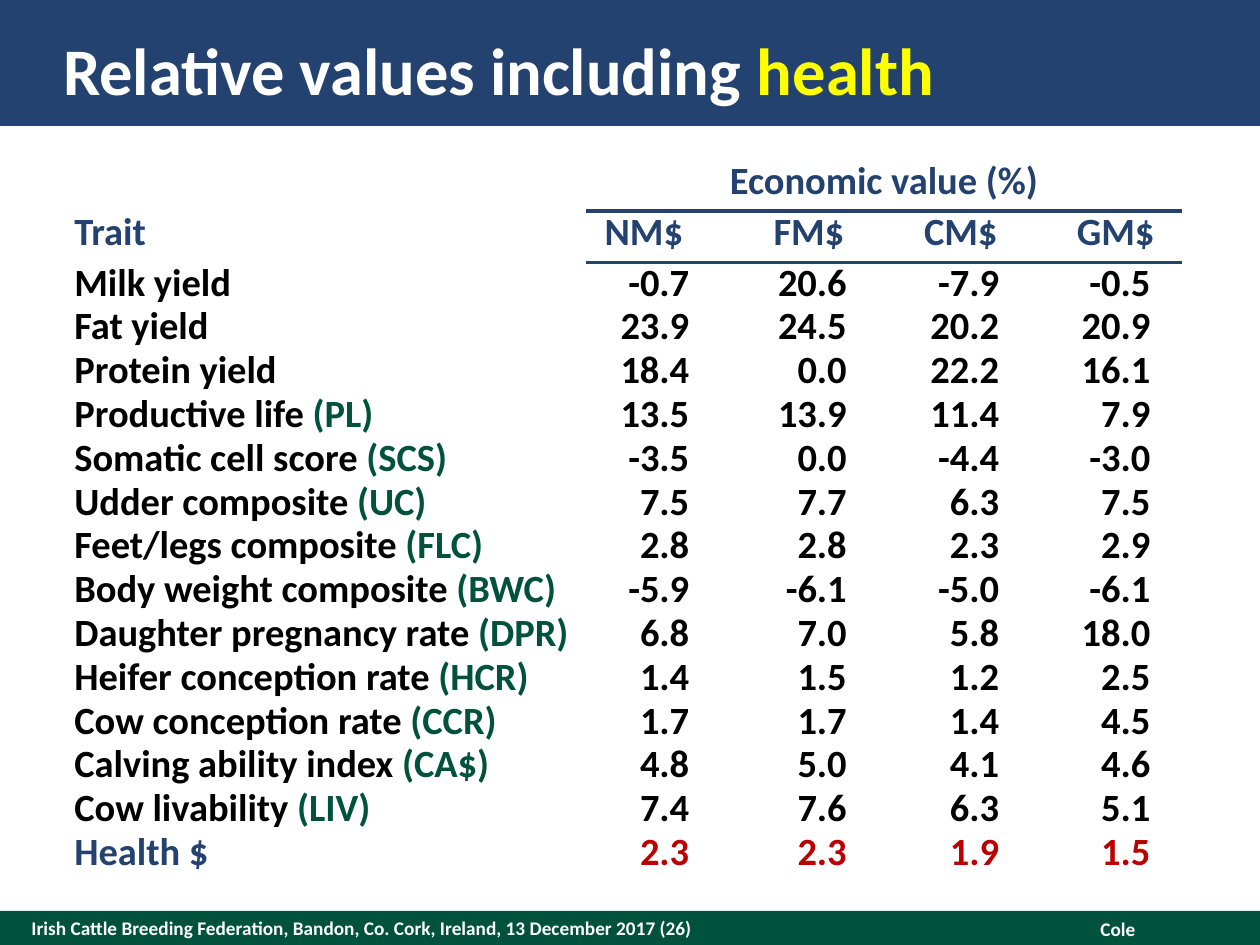
from lxml.etree import SubElement
from pptx import Presentation
from pptx.dml.color import RGBColor
from pptx.enum.shapes import MSO_SHAPE
from pptx.enum.text import MSO_ANCHOR as Anchor, MSO_AUTO_SIZE as AutoSize, PP_ALIGN as Align
from pptx.oxml.ns import qn
from pptx.util import Inches, Pt

COLORS = {"navy": "244270", "green": "00523C", "white": "FFFFFF",
          "yellow": "FFFF00", "black": "000000", "red": "BA0000"}
FONT = "Calibri"
NO_STYLE = "{2D5ABB26-0587-4C30-8999-92F81FD0307C}"
COLUMN_WIDTHS = [4.06, 0.92, 1.5, 1.26, 1.05]
INDEXES = [("NM$", 0, 0), ("FM$", 0.2, 0), ("CM$", 0, 0.15), ("GM$", 0, 0)]
VALUE_INSETS = [(0, 0.1), (0.1, 0.35), (0, 0.4), (0, 0.25)]
TRAITS = [
    ("Milk yield", "", ["-0.7", "20.6", "-7.9", "-0.5"]),
    ("Fat yield", "", ["23.9", "24.5", "20.2", "20.9"]),
    ("Protein yield", "", ["18.4", "0.0", "22.2", "16.1"]),
    ("Productive life", "PL", ["13.5", "13.9", "11.4", "7.9"]),
    ("Somatic cell score", "SCS", ["-3.5", "0.0", "-4.4", "-3.0"]),
    ("Udder composite", "UC", ["7.5", "7.7", "6.3", "7.5"]),
    ("Feet/legs composite", "FLC", ["2.8", "2.8", "2.3", "2.9"]),
    ("Body weight composite", "BWC", ["-5.9", "-6.1", "-5.0", "-6.1"]),
    ("Daughter pregnancy rate", "DPR", ["6.8", "7.0", "5.8", "18.0"]),
    ("Heifer conception rate", "HCR", ["1.4", "1.5", "1.2", "2.5"]),
    ("Cow conception rate", "CCR", ["1.7", "1.7", "1.4", "4.5"]),
    ("Calving ability index", "CA$", ["4.8", "5.0", "4.1", "4.6"]),
    ("Cow livability", "LIV", ["7.4", "7.6", "6.3", "5.1"]),
    ("Health $", "", ["2.3", "2.3", "1.9", "1.5"]),
]


def rgb(color):
    """Return the named colour."""
    return RGBColor.from_string(COLORS[color])


def add_runs(paragraph, runs, size):
    """Add bold runs given as (wording, colour) pairs."""
    for wording, color in runs:
        run = paragraph.add_run()
        run.text = wording
        run.font.name, run.font.size, run.font.bold = FONT, Pt(size), True
        run.font.color.rgb = rgb(color)


def set_insets(target, left, top, right, bottom):
    """Set the margins of a text frame or cell in inches."""
    target.margin_left, target.margin_top = Inches(left), Inches(top)
    target.margin_right, target.margin_bottom = Inches(right), Inches(bottom)


def add_band(slide, top, height, color):
    """Draw a full-width band behind the title."""
    band = slide.shapes.add_shape(MSO_SHAPE.RECTANGLE, 0, Inches(top), Inches(10), Inches(height))
    band.shadow.inherit = False
    band.fill.solid()
    band.fill.fore_color.rgb = rgb(color)
    band.line.fill.background()
    slide.shapes.title.element.addprevious(band.element)


def add_title(slide, runs):
    """Place and fill the title placeholder."""
    title = slide.shapes.title
    title.left, title.top = Inches(0.5), Inches(0.2)
    title.width, title.height = Inches(9.26), Inches(0.7)
    frame = title.text_frame
    frame.auto_size = AutoSize.NONE
    frame.vertical_anchor = Anchor.MIDDLE
    set_insets(frame, 0, 0, 0, 0)
    frame.paragraphs[0].alignment = Align.LEFT
    add_runs(frame.paragraphs[0], runs, 38)


def add_footer(slide, wording, left, width, height, insets, anchor, align):
    """Add a line of white text to the footer band."""
    footer = slide.shapes.add_textbox(Inches(left), Inches(7.23), Inches(width), Inches(height))
    frame = footer.text_frame
    frame.word_wrap = True
    frame.vertical_anchor = anchor
    set_insets(frame, *insets)
    frame.paragraphs[0].alignment = align
    add_runs(frame.paragraphs[0], [(wording, "white")], 11)


def fill_cell(cell, runs, align, spacing, insets, anchor=Anchor.TOP):
    """Write one table cell."""
    set_insets(cell, *insets)
    cell.vertical_anchor = anchor
    paragraph = cell.text_frame.paragraphs[0]
    paragraph.alignment = align
    paragraph.line_spacing = Pt(spacing)
    add_runs(paragraph, runs, 22)


def add_rule(cell, side):
    """Draw a navy border on one side of a cell."""
    border = SubElement(cell._tc.get_or_add_tcPr(), qn(f"a:{side}"), w=str(Pt(2.25)))
    fill = SubElement(border, qn("a:solidFill"))
    SubElement(fill, qn("a:srgbClr"), val=COLORS["navy"])


def add_header(table):
    """Fill the two header rows and the rule between them."""
    table.cell(0, 0).merge(table.cell(1, 0))
    table.cell(0, 1).merge(table.cell(0, 4))
    fill_cell(table.cell(0, 0), [("Trait", "navy")], Align.LEFT, 24, (0, 0, 0, 0.05), Anchor.BOTTOM)
    fill_cell(table.cell(0, 1), [("Economic value (%)", "navy")], Align.CENTER, 24,
              (0, 0, 0, 0.05), Anchor.BOTTOM)
    for column, (index, left, right) in enumerate(INDEXES, 1):
        fill_cell(table.cell(1, column), [(index, "navy")], Align.CENTER, 22,
                  (left, 0.05, right, 0.05), Anchor.BOTTOM)
        add_rule(table.cell(0, column), "lnB")
        add_rule(table.cell(1, column), "lnT")


def add_trait(table, row, trait, code, values):
    """Fill one trait row."""
    is_health = trait == "Health $"
    runs = [(trait, "navy" if is_health else "black")]
    if code:
        runs.append((f" ({code})", "green"))
    fill_cell(table.cell(row, 0), runs, Align.LEFT, 25, (0, 0, 0, 0))
    for column, (value, (left, right)) in enumerate(zip(values, VALUE_INSETS), 1):
        fill_cell(table.cell(row, column), [(value, "red" if is_health else "black")],
                  Align.RIGHT, 25, (left, 0, right, 0))


def add_values_table(slide):
    """Build the table of economic values by trait."""
    frame = slide.shapes.add_table(len(TRAITS) + 2, len(COLUMN_WIDTHS), Inches(0.59),
                                   Inches(1.29), Inches(8.8), Inches(5.65))
    table = frame.table
    table.first_row = table.horz_banding = False
    table._tbl.tblPr.find(qn("a:tableStyleId")).text = NO_STYLE
    for column, width in zip(table.columns, COLUMN_WIDTHS):
        column.width = Inches(width)
    heights = [Inches(0.38), Inches(0.41)] + [Pt(25)] * len(TRAITS)
    for row, height in zip(table.rows, heights):
        row.height = height
    add_header(table)
    for row, trait in enumerate(TRAITS, 2):
        add_trait(table, row, *trait)
    for cell in table.iter_cells():
        cell.fill.background()


def main():
    """Build and save the slide."""
    deck = Presentation()
    deck.slide_width, deck.slide_height = Inches(10), Inches(7.5)
    slide = deck.slides.add_slide(deck.slide_layouts[5])
    add_band(slide, 7.23, 0.27, "green")
    add_band(slide, 0, 1, "navy")
    add_title(slide, [("Relative values including ", "white"), ("health", "yellow")])
    add_footer(slide, "Irish Cattle Breeding Federation, Bandon, Co. Cork, Ireland, 13 December 2017 (26)",
               0.25, 7, 0.27, (0, 0, 0, 0), Anchor.MIDDLE, Align.LEFT)
    add_footer(slide, "Cole", 7.11, 2, 0.29, (0.1, 0.05, 0.1, 0.05), Anchor.TOP, Align.RIGHT)
    add_values_table(slide)
    deck.save("out.pptx")


if __name__ == "__main__":
    main()
